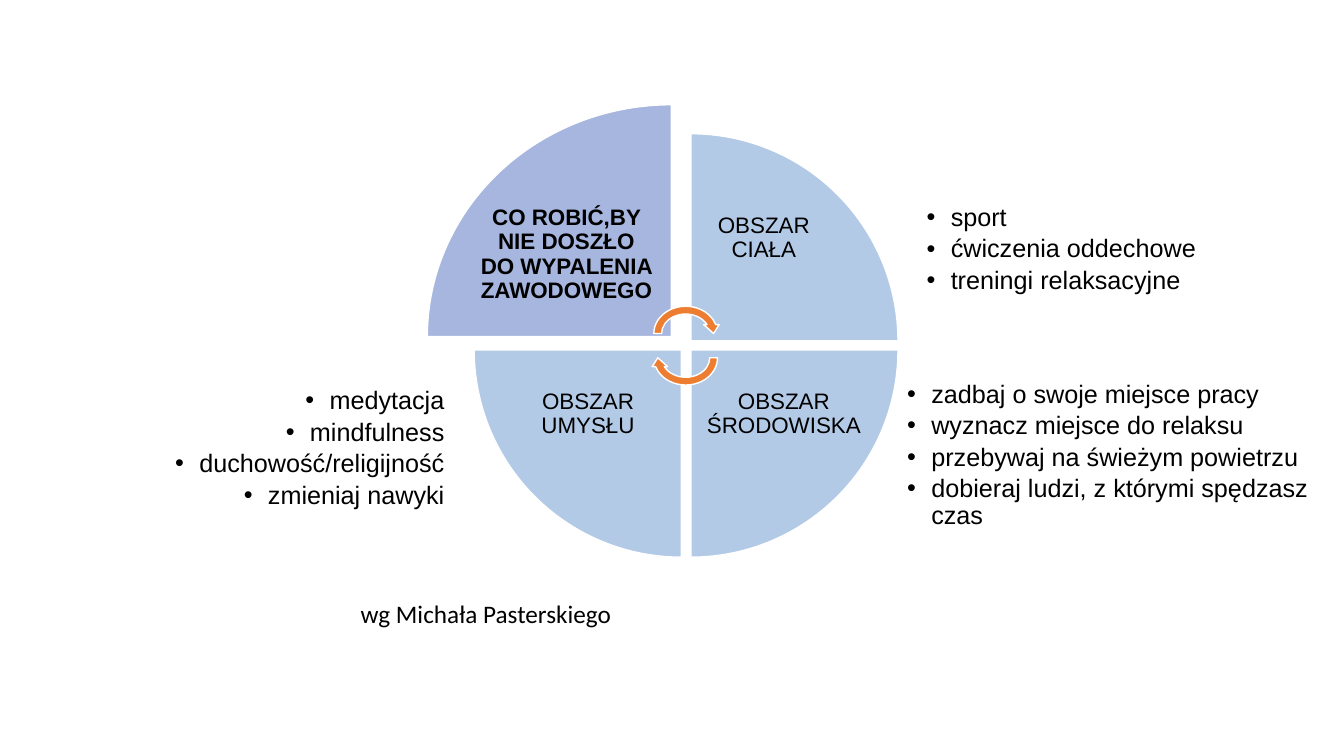
from dataclasses import dataclass

from lxml import etree
from pptx import Presentation
from pptx import util as u
from pptx.dml.color import RGBColor
from pptx.enum import shapes, text
from pptx.oxml.ns import qn

COLOURS = {
    "lead": "A6B6DE",
    "area": "B3CAE7",
    "arrow": "ED7D31",
    "edge": "FFFFFF",
    "ink": "000000",
}
LEFT, CENTRE, RIGHT = text.PP_ALIGN.LEFT, text.PP_ALIGN.CENTER, text.PP_ALIGN.RIGHT
TOP, MIDDLE = text.MSO_ANCHOR.TOP, text.MSO_ANCHOR.MIDDLE
COMPARISON_LAYOUT = 4


@dataclass(frozen=True)
class Frame:
    left: float
    top: float
    width: float
    height: float

    def lengths(self) -> list:
        return [u.Cm(n) for n in (self.left, self.top, self.width, self.height)]


@dataclass(frozen=True)
class Wedge:
    label: str
    frame: Frame
    label_frame: Frame
    rotation: int
    fill: str = "area"
    bold: bool = False


@dataclass(frozen=True)
class Advice:
    placeholder: int
    frame: Frame
    align: text.PP_ALIGN
    items: tuple


@dataclass(frozen=True)
class CycleArrow:
    frame: Frame
    rotation: int


SIDE = 5.22
WEDGES = (
    Wedge("CO ROBIĆ,BY NIE DOSZŁO DO WYPALENIA ZAWODOWEGO",
          Frame(10.77, 2.64, 6.15, 5.84), Frame(11.62, 4.35, 5.31, 4.14), 0, "lead", True),
    Wedge("OBSZAR CIAŁA",
          Frame(17.41, 3.37, SIDE, SIDE), Frame(17.41, 4.17, 3.68, 3.68), 90),
    Wedge("OBSZAR ŚRODOWISKA",
          Frame(17.41, 8.82, SIDE, SIDE), Frame(17.15, 8.61, 5.21, 3.68), 180),
    Wedge("OBSZAR UMYSŁU",
          Frame(11.95, 8.82, SIDE, SIDE), Frame(12.47, 8.38, 4.7, 4.14), 270),
)
CYCLE_ARROWS = (
    CycleArrow(Frame(16.38, 7.62, 1.8, 1.57), 0),
    CycleArrow(Frame(16.38, 8.23, 1.8, 1.57), 180),
)
ADVICE = (
    Advice(1, Frame(2.31, 9.58, 9.09, 3.48), RIGHT,
           ("medytacja", "mindfulness", "duchowość/religijność", "zmieniaj nawyki")),
    Advice(2, Frame(22.64, 9.41, 10.74, 3.76), LEFT,
           ("zadbaj o swoje miejsce pracy", "wyznacz miejsce do relaksu",
            "przebywaj na świeżym powietrzu", "dobieraj ludzi, z którymi spędzasz czas")),
    Advice(4, Frame(23.13, 4.96, 9.3, 3.1), LEFT,
           ("sport", "ćwiczenia oddechowe", "treningi relaksacyjne")),
)


def colour(name: str) -> RGBColor:
    return RGBColor.from_string(COLOURS[name])


def set_frame(box, inset_x: float, inset_y: float, anchor: text.MSO_ANCHOR) -> None:
    frame = box.text_frame
    frame.word_wrap = True
    frame.auto_size = text.MSO_AUTO_SIZE.NONE
    frame.vertical_anchor = anchor
    frame.margin_left = frame.margin_right = u.Cm(inset_x)
    frame.margin_top = frame.margin_bottom = u.Cm(inset_y)


def add_span(para, words: str, size: int, font: str = "Arial", bold: bool = False) -> None:
    span = para.add_run()
    span.text = words
    span.font.name = font
    span.font.size = u.Pt(size)
    span.font.bold = bold
    span.font.color.rgb = colour("ink")


def add_bullet(para) -> None:
    props = para._p.get_or_add_pPr()
    props.set("marL", str(u.Cm(0.63)))
    props.set("indent", str(u.Cm(-0.61)))
    tint = etree.SubElement(props, qn("a:buClr"))
    etree.SubElement(tint, qn("a:srgbClr"), val=COLOURS["ink"])
    etree.SubElement(props, qn("a:buFont"), typeface="Arial")
    etree.SubElement(props, qn("a:buChar"), char="•")


def fill_advice(page, advice: Advice) -> None:
    box = page.placeholders[advice.placeholder]
    box.left, box.top, box.width, box.height = advice.frame.lengths()
    set_frame(box, 0.2, 0.2, TOP)
    for index, item in enumerate(advice.items):
        para = box.text_frame.add_paragraph() if index else box.text_frame.paragraphs[0]
        add_bullet(para)
        para.level = 1
        para.alignment = advice.align
        para.line_spacing = 0.9
        para.space_before = u.Pt(3 if index else 0)
        para.space_after = u.Pt(0)
        add_span(para, item, 18)


def add_shape(page, kind: shapes.MSO_SHAPE, frame: Frame, rotation: int, fill: str) -> None:
    shape = page.shapes.add_shape(kind, *frame.lengths())
    shape.rotation = rotation
    shape.shadow.inherit = False
    shape.fill.solid()
    shape.fill.fore_color.rgb = colour(fill)
    shape.line.color.rgb = colour("edge")
    shape.line.width = u.Pt(1)


def add_wedge(page, wedge: Wedge) -> None:
    add_shape(page, shapes.MSO_SHAPE.PIE_WEDGE, wedge.frame, wedge.rotation, wedge.fill)
    box = page.shapes.add_textbox(*wedge.label_frame.lengths())
    set_frame(box, 0.44, 0.44, MIDDLE)
    para = box.text_frame.paragraphs[0]
    para.alignment = CENTRE
    para.line_spacing = 0.9
    add_span(para, wedge.label, 16, bold=wedge.bold)


def add_caption(page) -> None:
    box = page.shapes.add_textbox(*Frame(8.84, 14.94, 8.33, 0.71).lengths())
    set_frame(box, 0.25, 0.13, TOP)
    add_span(box.text_frame.paragraphs[0], "wg Michała Pasterskiego", 18, "Calibri")


def main() -> None:
    deck = Presentation()
    deck.slide_width, deck.slide_height = u.Cm(33.87), u.Cm(19.05)
    page = deck.slides.add_slide(deck.slide_layouts[COMPARISON_LAYOUT])
    for advice in ADVICE:
        fill_advice(page, advice)
    used = {advice.placeholder for advice in ADVICE}
    for holder in list(page.placeholders):
        if holder.placeholder_format.idx not in used:
            holder.element.getparent().remove(holder.element)
    for wedge in WEDGES:
        add_wedge(page, wedge)
    for arrow in CYCLE_ARROWS:
        add_shape(page, shapes.MSO_SHAPE.CIRCULAR_ARROW, arrow.frame, arrow.rotation, "arrow")
    add_caption(page)
    deck.save("out.pptx")


if __name__ == "__main__":
    main()
